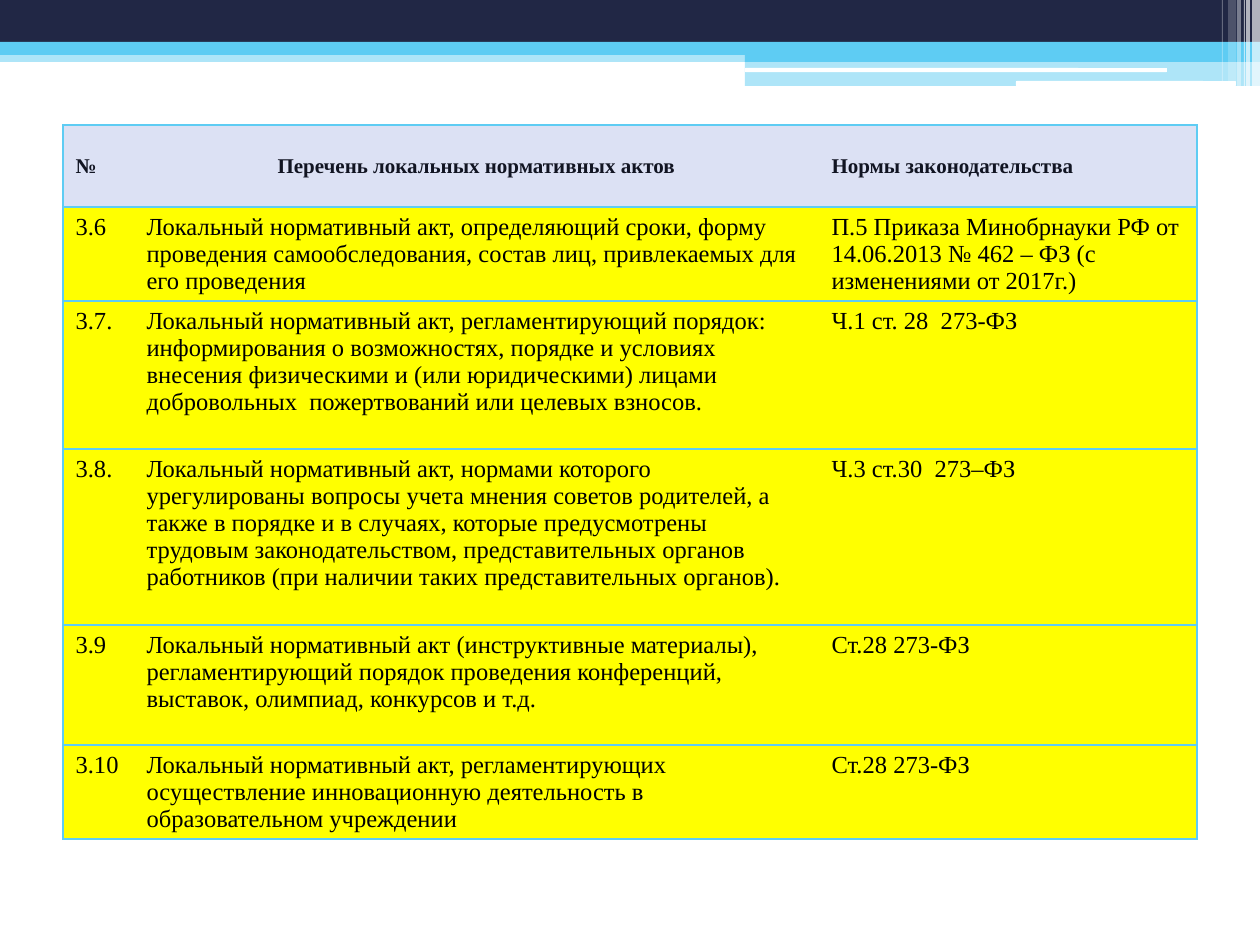
from dataclasses import dataclass
from lxml.etree import SubElement as Sub
from pptx import Presentation
from pptx.dml.color import RGBColor as RGB
from pptx.enum.shapes import MSO_SHAPE as Kind
from pptx.enum.text import MSO_ANCHOR as Anchor, PP_ALIGN as Align
from pptx.oxml.ns import qn
from pptx.util import Pt


@dataclass
class Theme:
    font: str = "Times New Roman"
    navy: str = "212745"
    sky: str = "5ECCF3"
    white: str = "FFFFFF"
    head: str = "DCE1F4"
    body: str = "FFFF00"
    dark: str = "111422"
    black: str = "000000"
    small: int = 12
    text: int = 14
    line: int = 1


theme = Theme()
PX = 914400 / 126


def px(num):
    return round(num * PX)


def edge(cell, side, show):
    line = Sub(cell._tc.get_or_add_tcPr(), qn("a:ln" + side), w=str(Pt(theme.line)))
    if show:
        fill = Sub(line, qn("a:solidFill"))
        Sub(fill, qn("a:srgbClr"), val=theme.sky)
    else:
        Sub(line, qn("a:noFill"))


deck = Presentation()
deck.slide_width, deck.slide_height = px(1260), px(945)
slide = deck.slides.add_slide(deck.slide_layouts[6])

bars = [
    (Kind.RECTANGLE, 0, 50, 1260, 12, theme.sky, 50),
    (Kind.RECTANGLE, 0, 0, 1260, 42, theme.navy, 100),
    (Kind.RECTANGLE, 0, 42, 1260, 13, theme.sky, 100),
    (Kind.RECTANGLE, 745, 49, 515, 13, theme.sky, 100),
    (Kind.RECTANGLE, 745, 61, 515, 25, theme.sky, 50),
    (Kind.ROUNDED_RECTANGLE, 745, 68, 422, 4, theme.white, 100),
    (Kind.ROUNDED_RECTANGLE, 1016, 81, 220, 5, theme.white, 100),
    (Kind.RECTANGLE, 1252, 0, 8, 86, theme.white, 65),
    (Kind.RECTANGLE, 1246, 0, 4, 86, theme.white, 65),
    (Kind.RECTANGLE, 1244, 0, 1, 86, theme.white, 60),
    (Kind.RECTANGLE, 1237, 0, 4, 86, theme.white, 40),
    (Kind.RECTANGLE, 1228, 0, 8, 81, theme.white, 20),
    (Kind.RECTANGLE, 1222, 0, 1, 81, theme.white, 30),
]
for kind, left, top, wide, high, tint, alpha in bars:
    bar = slide.shapes.add_shape(kind, px(left), px(top), px(wide), px(high))
    bar.shadow.inherit = False
    bar.line.fill.background()
    bar.fill.solid()
    bar.fill.fore_color.rgb = RGB.from_string(tint)
    if alpha < 100:
        color = bar.fill._xPr.find(".//" + qn("a:srgbClr"))
        Sub(color, qn("a:alpha"), val=str(alpha * 1000))

rows = [
    ("№", "Перечень локальных нормативных актов", "Нормы законодательства"),
    ("3.6", "Локальный нормативный акт, определяющий сроки, форму проведения самообследования, "
     "состав лиц, привлекаемых для его проведения",
     "П.5 Приказа Минобрнауки РФ от 14.06.2013 № 462 – ФЗ (с изменениями от 2017г.)"),
    ("3.7.", "Локальный нормативный акт, регламентирующий порядок: информирования о возможностях, "
     "порядке и условиях внесения физическими и (или юридическими) лицами добровольных  "
     "пожертвований или целевых взносов.", "Ч.1 ст. 28  273-ФЗ"),
    ("3.8.", "Локальный нормативный акт, нормами которого урегулированы вопросы учета мнения "
     "советов родителей, а также в порядке и в случаях, которые предусмотрены трудовым "
     "законодательством, представительных органов работников (при наличии таких "
     "представительных органов).", "Ч.3 ст.30  273–ФЗ"),
    ("3.9", "Локальный нормативный акт (инструктивные материалы), регламентирующий порядок "
     "проведения конференций, выставок, олимпиад, конкурсов и т.д.", "Ст.28 273-ФЗ"),
    ("3.10", "Локальный нормативный акт, регламентирующих осуществление инновационную "
     "деятельность в образовательном учреждении", "Ст.28 273-ФЗ"),
]
wides = [71, 685, 378]
highs = [82, 94, 148, 176, 120, 94]

frame = slide.shapes.add_table(len(rows), len(wides), px(63), px(125), px(sum(wides)), px(sum(highs)))
table = frame.table
table.horz_banding = False
for col, wide in zip(table.columns, wides):
    col.width = px(wide)
for row, high in zip(table.rows, highs):
    row.height = px(high)

for r, row in enumerate(rows):
    top = r == 0
    for c, words in enumerate(row):
        cell = table.cell(r, c)
        edge(cell, "L", c == 0)
        edge(cell, "R", c == len(wides) - 1)
        edge(cell, "T", True)
        edge(cell, "B", True)
        cell.fill.solid()
        cell.fill.fore_color.rgb = RGB.from_string(theme.head if top else theme.body)
        cell.vertical_anchor = Anchor.MIDDLE if top else Anchor.TOP
        cell.text = words
        para = cell.text_frame.paragraphs[0]
        para.alignment = Align.CENTER if top and c == 1 else Align.LEFT
        font = para.font
        font.name = theme.font
        font.size = Pt(theme.small if top else theme.text)
        font.bold = top
        font.color.rgb = RGB.from_string(theme.dark if top else theme.black)

deck.save("out.pptx")
